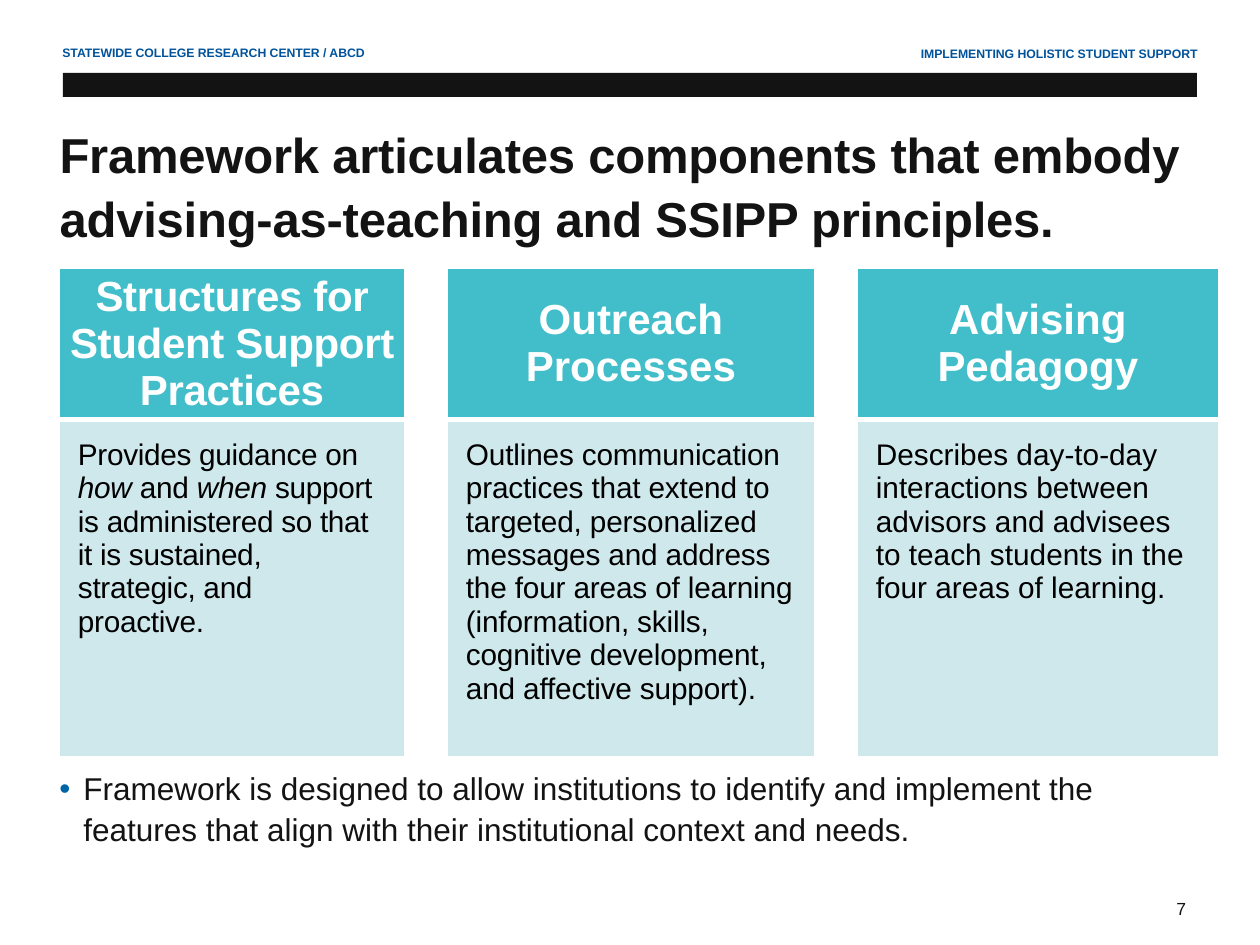
from lxml import etree
from pptx import Presentation, util as u
from pptx.dml.color import RGBColor
from pptx.enum import shapes, text
from pptx.oxml.ns import qn

EMU_PER_PX = 914400 / 126
FONT = "Arial"
INK, NAVY, BULLET_BLUE = "141313", "00539B", "0065A4"
TEAL, PALE_TEAL, WHITE, BLACK = "42BECA", "CFE8EC", "FFFFFF", "000000"
LEFT, CENTER, RIGHT = text.PP_ALIGN.LEFT, text.PP_ALIGN.CENTER, text.PP_ALIGN.RIGHT

# Heading, runs of (words, italic), heading spacing and body spacing in 1/100 pt
COMPONENTS = [
    ("Structures for Student Support Practices",
     [("Provides guidance on ", False), ("how", True), (" and ", False), ("when", True),
      (" support is administered so that it is sustained, strategic, and proactive.", False)],
     -20, -20),
    ("Outreach Processes",
     [("Outlines communication practices that extend to targeted, personalized messages "
       "and address the four areas of learning (information, skills, cognitive "
       "development, and affective support).", False)], 0, -10),
    ("Advising Pedagogy",
     [("Describes day-to-day interactions between advisors and advisees to teach "
       "students in the four areas of learning.", False)], 0, 0),
]


def px(length):
    return u.Emu(round(length * EMU_PER_PX))


def color(value):
    return RGBColor.from_string(value)


def add_run(paragraph, words, size, ink, bold=False, italic=False, spacing=0):
    run = paragraph.add_run()
    run.text = words
    font = run.font
    font.name, font.size, font.bold, font.italic = FONT, u.Pt(size), bold, italic
    font.color.rgb = color(ink)
    if spacing:
        run._r.get_or_add_rPr().set("spc", str(spacing))


def add_text_box(slide, box, align=LEFT):
    """Add a wrapping text box and return its first paragraph."""
    frame = slide.shapes.add_textbox(*map(px, box)).text_frame
    frame.word_wrap = True
    paragraph = frame.paragraphs[0]
    paragraph.alignment = align
    return paragraph


def add_page_header(slide, box):
    left, top, width, height = box
    # Running heads
    heads = [("STATEWIDE COLLEGE RESEARCH CENTER / ABCD", -13, 0, 449, LEFT),
             ("IMPLEMENTING HOLISTIC STUDENT SUPPORT", width - 388, 1, 401, RIGHT)]
    for words, x, y, head_width, align in heads:
        paragraph = add_text_box(slide, (left + x, top + y, head_width, 28), align)
        paragraph.space_before = u.Pt(2.3)
        add_run(paragraph, words, 7, NAVY, bold=True)
    # Black band
    band = slide.shapes.add_shape(shapes.MSO_SHAPE.RECTANGLE,
                                  *map(px, (left, top + height - 24, width, 24)))
    band.shadow.inherit = False
    band.fill.solid()
    band.fill.fore_color.rgb = color(INK)
    band.line.fill.background()


def add_title(slide, box, words):
    title = slide.shapes.title
    title.left, title.top, title.width, title.height = map(px, box)
    frame = title.text_frame
    frame.word_wrap = True
    frame.auto_size = text.MSO_AUTO_SIZE.NONE
    frame.vertical_anchor = text.MSO_ANCHOR.MIDDLE
    paragraph = frame.paragraphs[0]
    paragraph.alignment = LEFT
    paragraph.line_spacing = 1.08
    add_run(paragraph, words, 28, INK, bold=True, spacing=-10)


def set_borders(cell, bottom_width):
    properties = cell._tc.get_or_add_tcPr()
    widths = {"a:lnL": 1, "a:lnR": 1, "a:lnT": 1, "a:lnB": bottom_width}
    for position, (tag, width) in enumerate(widths.items()):
        line = etree.Element(qn(tag), w=str(u.Pt(width)))
        fill = etree.SubElement(line, qn("a:solidFill"))
        etree.SubElement(fill, qn("a:srgbClr"), val=WHITE)
        properties.insert(position, line)


def set_margins(cell, horizontal, vertical):
    cell.margin_left = cell.margin_right = px(horizontal)
    cell.margin_top = cell.margin_bottom = px(vertical)


def add_component_table(slide, box):
    # Component columns alternate with narrow gap columns
    column_widths, row_heights = (346, 42, 368, 42, 362), (140, 338)
    table = slide.shapes.add_table(2, 5, *map(px, box)).table
    table.first_row = table.horz_banding = False
    for column, width in zip(table.columns, column_widths):
        column.width = px(width)
    for row, height, bottom_width in zip(table.rows, row_heights, (3, 1)):
        row.height = px(height)
        for cell in row.cells:
            cell.fill.background()
            set_borders(cell, bottom_width)

    for index, (heading, runs, heading_spacing, body_spacing) in enumerate(COMPONENTS):
        head, body = table.cell(0, 2 * index), table.cell(1, 2 * index)
        for cell, fill in ((head, TEAL), (body, PALE_TEAL)):
            cell.fill.solid()
            cell.fill.fore_color.rgb = color(fill)
        # Heading cell
        head.vertical_anchor = text.MSO_ANCHOR.MIDDLE
        set_margins(head, 0 if index == 0 else 13, 0)
        paragraph = head.text_frame.paragraphs[0]
        paragraph.alignment = CENTER
        add_run(paragraph, heading, 24, WHITE, bold=True, spacing=heading_spacing)
        # Description cell
        set_margins(body, 19, 19)
        paragraph = body.text_frame.paragraphs[0]
        for words, italic in runs:
            add_run(paragraph, words, 17, BLACK, italic=italic, spacing=body_spacing)


def add_bullet_note(slide, box, words):
    paragraph = add_text_box(slide, box)
    paragraph.line_spacing = 1.08
    properties = paragraph._p.get_or_add_pPr()
    properties.set("marL", str(px(24)))
    properties.set("indent", str(-px(24)))
    bullet_color = etree.SubElement(properties, qn("a:buClr"))
    etree.SubElement(bullet_color, qn("a:srgbClr"), val=BULLET_BLUE)
    etree.SubElement(properties, qn("a:buFont"), typeface=FONT)
    etree.SubElement(properties, qn("a:buChar"), char="•")
    add_run(paragraph, words, 18, INK)


def add_page_number(slide, box, number):
    add_run(add_text_box(slide, box), number, 10, INK)


def main():
    presentation = Presentation()
    presentation.slide_width, presentation.slide_height = px(1260), px(945)
    slide = presentation.slides.add_slide(presentation.slide_layouts[5])
    add_page_header(slide, (63, 39, 1134, 58))
    add_title(slide, (47, 105, 1150, 157),
              "Framework articulates components that embody "
              "advising-as-teaching and SSIPP principles.")
    add_component_table(slide, (59, 268, 1160, 478))
    add_bullet_note(slide, (47, 760, 1134, 106),
                    "Framework is designed to allow institutions to identify and implement "
                    "the features that align with their institutional context and needs.")
    add_page_number(slide, (1164, 892, 58, 34), "7")
    presentation.save("out.pptx")


if __name__ == "__main__":
    main()
